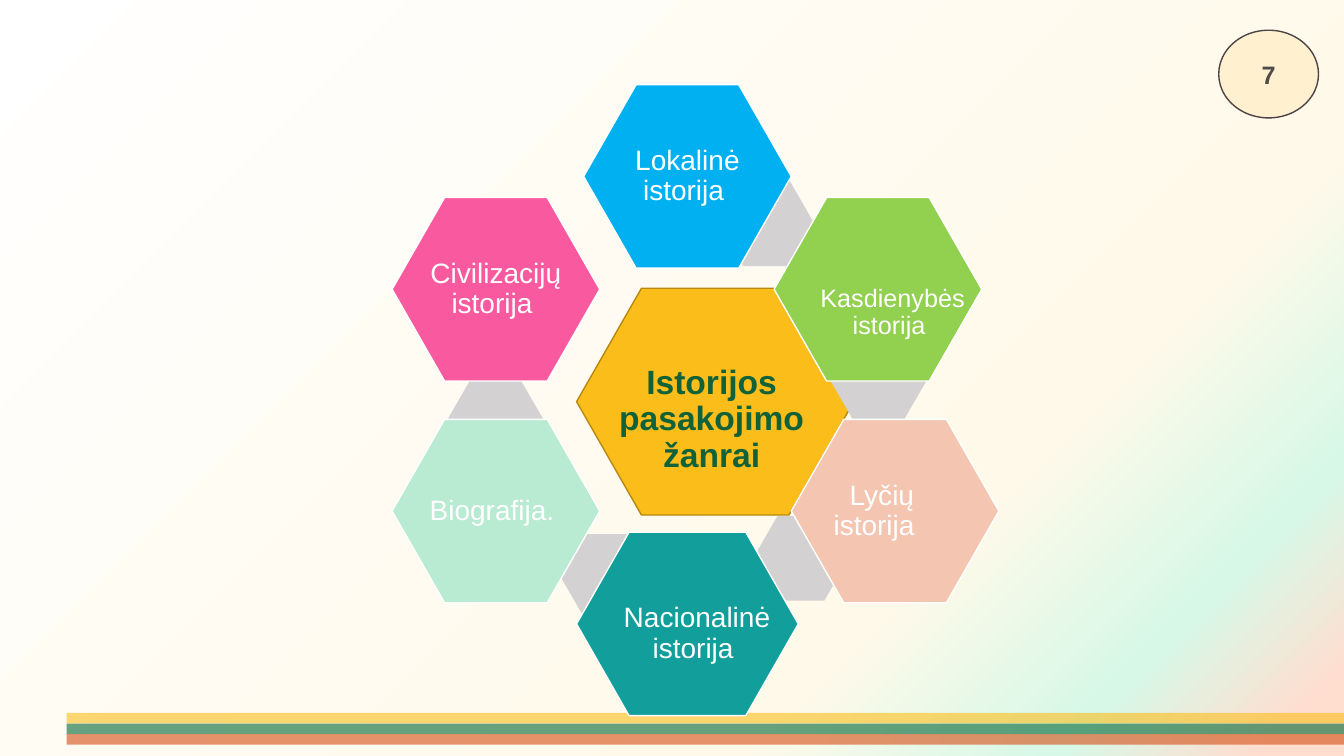
from lxml import etree
from pptx import Presentation, util as u
from pptx.dml.color import RGBColor
from pptx.enum import shapes as kinds, text as txt
from pptx.oxml.ns import qn

THEME = {
    "font": "Arial", "white": "FFFFFF", "link": "D3D1D1",
    "core": "FBBD1A", "core_edge": "B78912", "core_text": "116238",
    "badge": "FFF1CF", "badge_edge": "4E4447", "badge_text": "524B4D",
    "stripes": ["FBBD1A", "006633", "D54D13"], "stripe_alpha": 60,
    "glow": [(0, "FFFFFF"), (71, "FFF9EA"), (86, "D7F8E7"), (96, "FFDED0"), (100, "FFDED0")],
    "title": 24, "label": 20, "small": 18,
}

# Grid: 133.3 columns by 75 rows of a tenth of an inch
CELL = u.Inches(0.1)
COLS, ROWS = 133.33, 75

deck = Presentation()
deck.slide_width, deck.slide_height = round(COLS * CELL), ROWS * CELL
slide = deck.slides.add_slide(deck.slide_layouts[6])


def draw(kind, box, fill, edge=None, adj=None):
    shape = slide.shapes.add_shape(kind, *(round(n * CELL) for n in box))
    shape.shadow.inherit = False
    shape.fill.solid()
    shape.fill.fore_color.rgb = RGBColor.from_string(fill)
    if edge:
        shape.line.color.rgb = RGBColor.from_string(edge)
        shape.line.width = u.Pt(1)
    else:
        shape.line.fill.background()
    if adj:
        shape.adjustments[0] = adj
    return shape


def write(holder, words, size, color, bold=False, inset=None, spacing=None):
    frame = holder.text_frame
    frame.word_wrap = True
    frame.vertical_anchor = txt.MSO_ANCHOR.MIDDLE
    if inset is not None:
        frame.margin_left = frame.margin_right = u.Inches(inset)
        frame.margin_top = frame.margin_bottom = u.Inches(inset)
    line = frame.paragraphs[0]
    line.text = words
    line.alignment = txt.PP_ALIGN.CENTER
    line.line_spacing = spacing
    line.font.name, line.font.size, line.font.bold = THEME["font"], u.Pt(size), bold
    line.font.color.rgb = RGBColor.from_string(color)


# Background: glow spreading from the top left corner
slide.background.fill.gradient()
glow = slide.background._cSld.find(".//" + qn("a:gradFill"))
for part in list(glow):
    glow.remove(part)
stops = etree.SubElement(glow, qn("a:gsLst"))
for place, color in THEME["glow"]:
    stop = etree.SubElement(stops, qn("a:gs"), pos=str(place * 1000))
    etree.SubElement(stop, qn("a:srgbClr"), val=color)
spread = etree.SubElement(glow, qn("a:path"), path="circle")
etree.SubElement(spread, qn("a:fillToRect"), r="100000", b="100000")

# Stripes along the bottom
for row, color in enumerate(THEME["stripes"]):
    stripe = draw(kinds.MSO_SHAPE.RECTANGLE, (6.6, 70.73 + row * 1.05, COLS - 6.6, 1.05), color)
    tint = stripe.fill._xPr.find(".//" + qn("a:srgbClr"))
    etree.SubElement(tint, qn("a:alpha"), val=str(THEME["stripe_alpha"] * 1000))

# Genres round the core, clockwise from the top:
# words, colour, hexagon (left, top, width), label offset and size, type size, link place
HEX, LABEL, OFFSET = 20.6, (13.8, 12.2), (3.4, 3)
genres = [
    ("Lokalinė istorija ", "00B0F0", (57.9, 8.4, HEX), OFFSET, LABEL, "label", (71.3, 18)),
    ("Kasdienybės istorija ", "92D050", (76.8, 19.6, HEX), OFFSET, (16.7, 16.9), "small", (82.4, 33.6)),
    (" Lyčių istorija ", "F4C5B1", (78.5, 41.6, HEX), (1.7, 3), LABEL, "label", (74.7, 51.2)),
    ("Nacionalinė istorija ", "129E9A", (57.2, 52.8, 22), (3.6, 2.9), (16.7, 14.4), "label", (55.6, 53)),
    ("Biografija. ", "B8EBD2", (38.9, 41.6, HEX), OFFSET, LABEL, "label", (44.4, 37.4)),
    ("Civilizacijų istorija ", "F9599E", (38.9, 19.6, HEX), OFFSET, LABEL, "label", None),
]

# Core hexagon and its title
draw(kinds.MSO_SHAPE.HEXAGON, (57.2, 28.6, 27.5, 22.5), THEME["core"], THEME["core_edge"], 0.286)
title = slide.shapes.add_textbox(*(round(n * CELL) for n in (58.8, 32.1, 23.6, 19.1)))
write(title, "Istorijos pasakojimo žanrai", THEME["title"], THEME["core_text"], True, 0.03, 0.9)

# Each genre: grey link behind, hexagon, label
for words, color, (left, top, width), (dx, dy), size, type_size, link in genres:
    if link:
        draw(kinds.MSO_SHAPE.HEXAGON, (*link, 9.5, 8.4), THEME["link"], adj=0.289)
    draw(kinds.MSO_SHAPE.HEXAGON, (left, top, width, 18.2), color, THEME["white"], 0.286)
    label = slide.shapes.add_textbox(*(round(n * CELL) for n in (left + dx, top + dy, *size)))
    write(label, words, THEME[type_size], THEME["white"], False, 0.03, 0.9)

# Page number badge
badge = draw(kinds.MSO_SHAPE.OVAL, (120.9, 3, 9.9, 8.7), THEME["badge"], THEME["badge_edge"])
write(badge, "7", THEME["small"], THEME["badge_text"], True)

deck.save("out.pptx")
